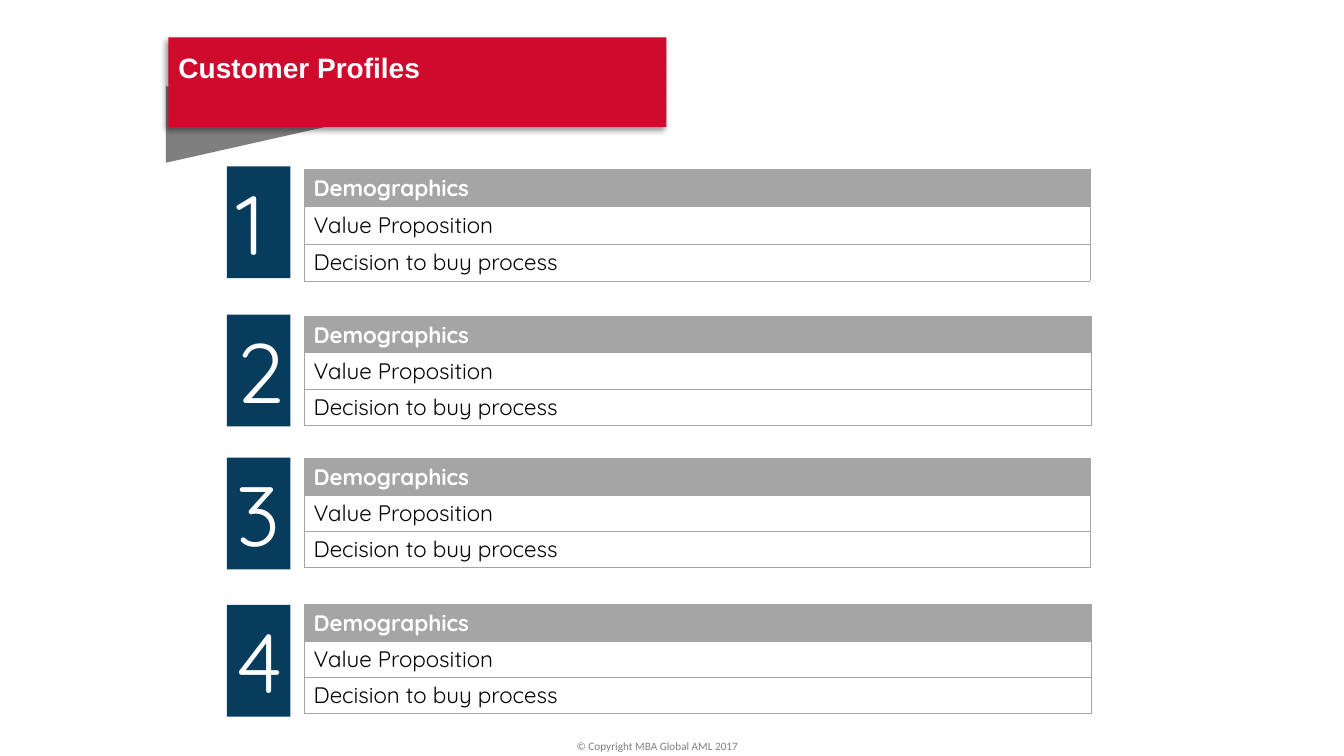
from dataclasses import dataclass

from lxml.etree import SubElement
from pptx import Presentation
from pptx.dml.color import RGBColor
from pptx.enum.shapes import MSO_SHAPE as Preset
from pptx.enum.text import MSO_ANCHOR as Anchor, MSO_AUTO_SIZE as AutoSize, PP_ALIGN as Align
from pptx.oxml.ns import qn
from pptx.util import Inches, Pt


@dataclass(frozen=True)
class Theme:
    red: str = "D00A2D"
    navy: str = "073C5C"
    grid: str = "A5A5A5"
    fold: str = "7F7F7F"
    footer: str = "808080"
    white: str = "FFFFFF"
    black: str = "000000"
    heading_font: str = "Arial"
    body_font: str = "Quicksand"
    footer_font: str = "Calibri"
    heading_size: int = 20
    number_size: int = 60
    body_size: int = 16
    footer_size: int = 8


THEME = Theme()
ROWS = ["Demographics", "Value Proposition", "Decision to buy process"]
# Number top, table top, row height and table width of each profile
PROFILES = [
    (1.65, 1.68, 0.37, 7.79),
    (3.12, 3.14, 0.36, 7.80),
    (4.54, 4.55, 0.36, 7.79),
    (6.00, 6.00, 0.36, 7.80),
]
LABEL_WIDTH = 2.78


def place(shape, left, top, width, height):
    shape.left, shape.top = Inches(left), Inches(top)
    shape.width, shape.height = Inches(width), Inches(height)


def paint(shape, color):
    shape.fill.solid()
    shape.fill.fore_color.rgb = RGBColor.from_string(color)
    shape.line.fill.background()


def style(paragraph, name, size, color, bold=False):
    paragraph.alignment = Align.LEFT
    font = paragraph.font
    font.name, font.size, font.bold = name, Pt(size), bold
    font.color.rgb = RGBColor.from_string(color)


def add_drop_shadow(shape):
    effects = SubElement(shape.element.spPr, qn("a:effectLst"))
    shadow = SubElement(effects, qn("a:outerShdw"), blurRad=str(Pt(4)), dist=str(Pt(3)),
                        dir=str(135 * 60000), algn="tr", rotWithShape="0")
    color = SubElement(shadow, qn("a:srgbClr"), val=THEME.black)
    SubElement(color, qn("a:alpha"), val="40000")


def add_heading(slide, text):
    """Fill the title as a red ribbon in front of its grey fold."""
    fold = slide.shapes.add_shape(
        Preset.FLOWCHART_EXTRACT, Inches(2.11), Inches(0.39), Inches(0.76), Inches(1.69))
    fold.rotation = 90
    fold.shadow.inherit = False
    paint(fold, THEME.fold)

    title = slide.shapes.title
    place(title, 1.67, 0.37, 4.94, 0.89)
    paint(title, THEME.red)
    add_drop_shadow(title)
    frame = title.text_frame
    frame.text = text
    frame.auto_size = AutoSize.NONE
    frame.vertical_anchor = Anchor.TOP
    frame.margin_top = Inches(0.13)
    style(frame.paragraphs[0], THEME.heading_font, THEME.heading_size, THEME.white, True)
    slide.shapes.element.append(title.element)


def add_text(slide, text, box, name, size, color, wrap):
    text_box = slide.shapes.add_textbox(*map(Inches, box))
    frame = text_box.text_frame
    frame.text = text
    frame.word_wrap = wrap
    frame.auto_size = AutoSize.SHAPE_TO_FIT_TEXT
    style(frame.paragraphs[0], name, size, color)
    return text_box


def set_borders(cell, visible_sides):
    properties = cell._tc.get_or_add_tcPr()
    for side in "LRTB":
        line = SubElement(properties, qn(f"a:ln{side}"), w=str(Pt(0.5)))
        if side in visible_sides:
            fill = SubElement(line, qn("a:solidFill"))
            SubElement(fill, qn("a:srgbClr"), val=THEME.grid)
        else:
            SubElement(line, qn("a:noFill"))


def format_cell(cell, text, is_header):
    cell.text = text
    cell.vertical_anchor = Anchor.MIDDLE
    cell.margin_left = cell.margin_right = Inches(0.09)
    cell.margin_top = cell.margin_bottom = Inches(0.04 if text else 0)
    set_borders(cell, "LTB" if text else "RTB")
    if is_header:
        cell.fill.solid()
        cell.fill.fore_color.rgb = RGBColor.from_string(THEME.grid)
    else:
        cell.fill.background()
    style(cell.text_frame.paragraphs[0], THEME.body_font, THEME.body_size,
          THEME.white if is_header else THEME.black, is_header)


def add_profile_table(slide, top, row_height, width):
    table = slide.shapes.add_table(
        len(ROWS), 2, Inches(3.02), Inches(top), Inches(width),
        Inches(row_height * len(ROWS))).table
    table.first_row = table.horz_banding = False
    table.columns[0].width = Inches(LABEL_WIDTH)
    table.columns[1].width = Inches(width - LABEL_WIDTH)
    for index, label in enumerate(ROWS):
        table.rows[index].height = Inches(row_height)
        for column, text in enumerate((label, "")):
            format_cell(table.cell(index, column), text, index == 0)


def main():
    presentation = Presentation()
    presentation.slide_width, presentation.slide_height = Inches(13.33), Inches(7.5)
    slide = presentation.slides.add_slide(presentation.slide_layouts.get_by_name("Title Only"))

    add_heading(slide, "Customer Profiles")
    for number, (number_top, table_top, row_height, width) in enumerate(PROFILES, start=1):
        badge = add_text(slide, str(number), (2.25, number_top, 0.63, 1.11),
                         THEME.body_font, THEME.number_size, THEME.white, True)
        paint(badge, THEME.navy)
        add_profile_table(slide, table_top, row_height, width)
    add_text(slide, "© Copyright MBA Global AML 2017", (5.62, 7.29, 2.1, 0.24),
             THEME.footer_font, THEME.footer_size, THEME.footer, False)
    presentation.save("out.pptx")


if __name__ == "__main__":
    main()
